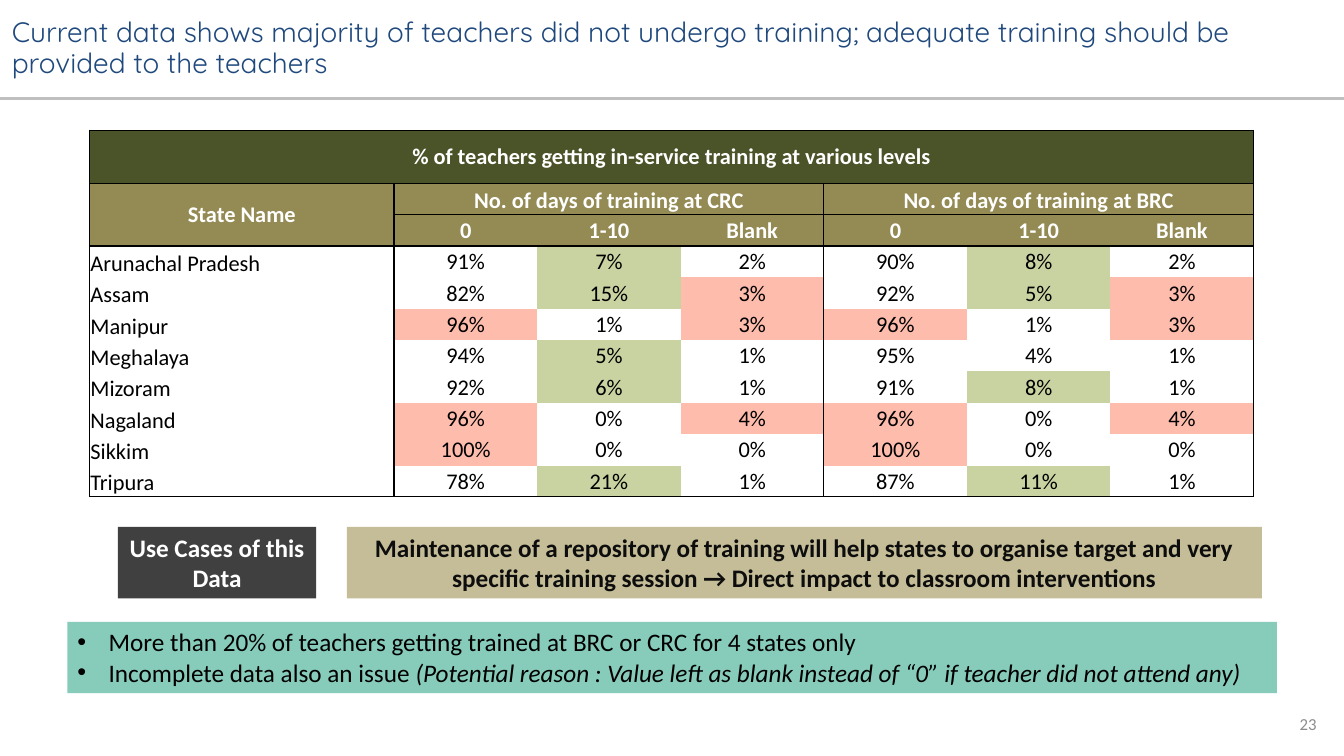
from dataclasses import dataclass

from lxml.etree import SubElement
from pptx import Presentation
from pptx.dml.color import RGBColor
from pptx.enum.shapes import MSO_CONNECTOR, MSO_SHAPE
from pptx.enum.text import MSO_ANCHOR as Anchor, PP_ALIGN as Align
from pptx.oxml.ns import qn
from pptx.slide import Slide
from pptx.table import Table, _Cell
from pptx.text.text import TextFrame, _Paragraph
from pptx.util import Cm, Pt

BLACK = RGBColor(0x00, 0x00, 0x00)
WHITE = RGBColor(0xFF, 0xFF, 0xFF)
NAVY = RGBColor(0x1F, 0x49, 0x7D)
RULE_GREY = RGBColor(0xBF, 0xBF, 0xBF)
NUMBER_GREY = RGBColor(0x8C, 0x8C, 0x8C)
DARK_OLIVE = RGBColor(0x4B, 0x53, 0x28)
OLIVE = RGBColor(0x94, 0x8A, 0x54)
GREEN = RGBColor(0xC9, 0xD2, 0xA1)
RED = RGBColor(0xFE, 0xBC, 0xAC)
TEAL = RGBColor(0x87, 0xCB, 0xBA)
CHARCOAL = RGBColor(0x40, 0x40, 0x40)
TAN = RGBColor(0xC4, 0xBD, 0x97)
INK = RGBColor(0x0D, 0x0D, 0x0D)

STATES = {
    "Arunachal Pradesh": (91, 7, 2, 90, 8, 2),
    "Assam": (82, 15, 3, 92, 5, 3),
    "Manipur": (96, 1, 3, 96, 1, 3),
    "Meghalaya": (94, 5, 1, 95, 4, 1),
    "Mizoram": (92, 6, 1, 91, 8, 1),
    "Nagaland": (96, 0, 4, 96, 0, 4),
    "Sikkim": (100, 0, 0, 100, 0, 0),
    "Tripura": (78, 21, 1, 87, 11, 1),
}
DAY_BANDS = ("0", "1-10", "Blank")
HIGHLIGHTS = ((96, RED), (5, GREEN), (3, RED))
HEADER_ROWS = 3
ROWS = HEADER_ROWS + len(STATES)
COLS = 1 + 2 * len(DAY_BANDS)
ROW_LINES = (0, 1, 2, 3, ROWS)
COL_LINES = (0, 1, 4, COLS)


@dataclass
class Box:
    left: float
    top: float
    width: float
    height: float
    fill: RGBColor


@dataclass
class Entry:
    row: int
    col: int
    text: str
    fill: RGBColor | None
    color: RGBColor = BLACK
    bold: bool = False
    rows: int = 1
    cols: int = 1
    align: Align = Align.CENTER
    anchor: Anchor = Anchor.MIDDLE


def add_run(p: _Paragraph, text: str, *, size: float = 18, color: RGBColor = BLACK,
            font: str = "Calibri", bold: bool = False, italic: bool = False,
            align: Align = Align.LEFT) -> None:
    p.alignment = align
    r = p.add_run()
    r.text = text
    r.font.name, r.font.size = font, Pt(size)
    r.font.bold, r.font.italic = bold, italic
    r.font.color.rgb = color


def add_box(s: Slide, box: Box, anchor: Anchor = Anchor.TOP) -> TextFrame:
    sp = s.shapes.add_shape(MSO_SHAPE.RECTANGLE, Cm(box.left), Cm(box.top),
                            Cm(box.width), Cm(box.height))
    sp.shadow.inherit = False
    sp.fill.solid()
    sp.fill.fore_color.rgb = box.fill
    sp.line.fill.background()
    tf = sp.text_frame
    tf.word_wrap = True
    tf.vertical_anchor = anchor
    return tf


def add_rule(s: Slide, y: float) -> None:
    line = s.shapes.add_connector(MSO_CONNECTOR.STRAIGHT, 0, Cm(y), Cm(33.87), Cm(y))
    line.line.color.rgb = RULE_GREY
    line.line.width = Pt(1.5)
    SubElement(line._element.spPr, qn("a:effectLst"))


def add_bullet(p: _Paragraph) -> None:
    pPr = p._p.get_or_add_pPr()
    pPr.set("marL", str(Cm(0.79)))
    pPr.set("indent", str(-Cm(0.79)))
    SubElement(pPr, qn("a:buFont")).set("typeface", "Arial")
    SubElement(pPr, qn("a:buChar")).set("char", "•")


def set_borders(cell: _Cell, e: Entry) -> None:
    tcPr = cell._tc.get_or_add_tcPr()
    edges = {"L": e.col in COL_LINES, "R": e.col + e.cols in COL_LINES,
             "T": e.row in ROW_LINES, "B": e.row + e.rows in ROW_LINES}
    for side, drawn in edges.items():
        ln = SubElement(tcPr, qn(f"a:ln{side}"), w=str(Pt(1)))
        if drawn:
            fill = SubElement(ln, qn("a:solidFill"))
            SubElement(fill, qn("a:srgbClr")).set("val", str(BLACK))
        else:
            SubElement(ln, qn("a:noFill"))


def fill_entry(table: Table, e: Entry) -> None:
    for row in range(e.row, e.row + e.rows):
        for col in range(e.col, e.col + e.cols):
            cell = table.cell(row, col)
            set_borders(cell, e)
            if e.fill is None:
                cell.fill.background()
            else:
                cell.fill.solid()
                cell.fill.fore_color.rgb = e.fill
    cell = table.cell(e.row, e.col)
    if e.rows * e.cols > 1:
        cell.merge(table.cell(e.row + e.rows - 1, e.col + e.cols - 1))
    inset = Cm(0.02) if e.row >= HEADER_ROWS else 0
    cell.margin_left = cell.margin_right = cell.margin_top = inset
    cell.margin_bottom = 0
    cell.vertical_anchor = e.anchor
    add_run(cell.text_frame.paragraphs[0], e.text, size=16, color=e.color,
            bold=e.bold, align=e.align)


def table_entries() -> list[Entry]:
    entries = [
        Entry(0, 0, "% of teachers getting in-service training at various levels",
              DARK_OLIVE, WHITE, True, cols=COLS),
        Entry(1, 0, "State Name", OLIVE, WHITE, True, rows=2),
    ]
    for i, level in enumerate(("CRC", "BRC")):
        first = 1 + i * len(DAY_BANDS)
        entries.append(Entry(1, first, f"No. of days of training at {level}", OLIVE, WHITE,
                             True, cols=len(DAY_BANDS), anchor=Anchor.BOTTOM))
        entries += [Entry(2, first + j, band, OLIVE, WHITE, True)
                    for j, band in enumerate(DAY_BANDS)]
    for row, (state, shares) in enumerate(STATES.items(), HEADER_ROWS):
        entries.append(Entry(row, 0, state, None, align=Align.LEFT, anchor=Anchor.BOTTOM))
        for i, share in enumerate(shares):
            limit, color = HIGHLIGHTS[i % len(DAY_BANDS)]
            entries.append(Entry(row, i + 1, f"{share}%", color if share >= limit else WHITE))
    return entries


def add_training_table(s: Slide) -> None:
    table = s.shapes.add_table(ROWS, COLS, Cm(2.26), Cm(3.28), Cm(29.33), Cm(9.2)).table
    for i, col in enumerate(table.columns):
        col.width = Cm(3.61 if i else 7.67)
    for i, row in enumerate(table.rows):
        row.height = Cm(0.79 if i else 1.34)
    for entry in table_entries():
        fill_entry(table, entry)


def main() -> None:
    prs = Presentation()
    prs.slide_width, prs.slide_height = Cm(33.87), Cm(19.05)
    s = prs.slides.add_slide(prs.slide_layouts[6])

    for y in (2.46, 2.49):
        add_rule(s, y)
    title = add_box(s, Box(0.05, 0.03, 33.8, 2.41, WHITE), Anchor.MIDDLE).paragraphs[0]
    title.line_spacing = 0.9
    add_run(title, "Current data shows majority of teachers did not undergo training; "
            "adequate training should be provided to the teachers",
            size=20, color=NAVY, font="Quicksand")

    number = s.shapes.add_textbox(Cm(25.81), Cm(17.73), Cm(7.62), Cm(1.02)).text_frame
    number.word_wrap = True
    number.vertical_anchor = Anchor.MIDDLE
    add_run(number.paragraphs[0], "23", size=12, color=NUMBER_GREY, align=Align.RIGHT)

    add_training_table(s)

    tf = add_box(s, Box(1.7, 15.67, 30.48, 1.8, TEAL))
    findings = (tf.paragraphs[0], tf.add_paragraph())
    for p in findings:
        add_bullet(p)
    add_run(findings[0], "More than 20% of teachers getting trained at BRC or CRC for 4 states only")
    add_run(findings[1], "Incomplete data also an issue ")
    add_run(findings[1], "(Potential reason : Value left as blank instead of “0” "
            "if teacher did not attend any)", italic=True)

    use_cases = (
        (Box(2.97, 13.28, 5, 1.8, CHARCOAL), WHITE, "Use Cases of this Data"),
        (Box(8.74, 13.28, 23.06, 1.8, TAN), INK,
         "Maintenance of a repository of training will help states to organise target and very "
         "specific training session → Direct impact to classroom interventions"),
    )
    for box, color, text in use_cases:
        add_run(add_box(s, box).paragraphs[0], text, color=color, bold=True, align=Align.CENTER)

    prs.save("out.pptx")


if __name__ == "__main__":
    main()
